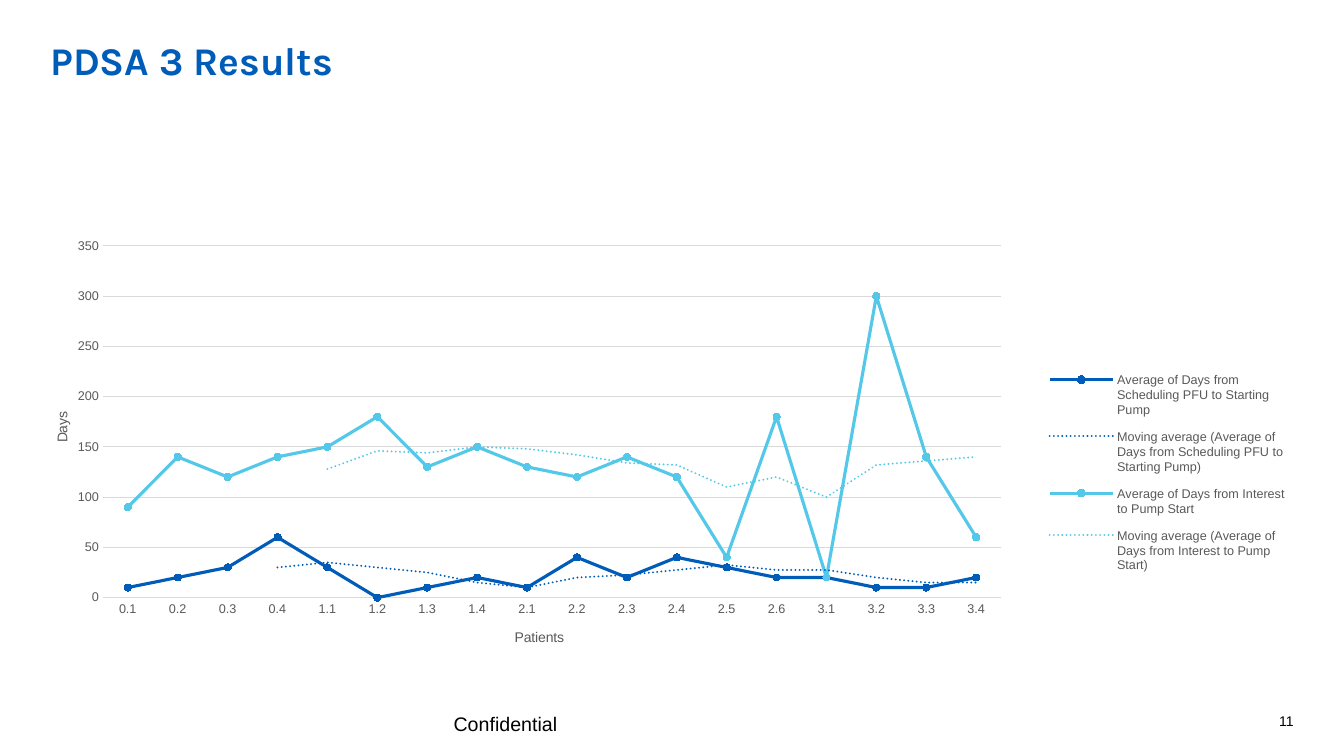
from lxml import etree
from pptx import Presentation
from pptx.chart.data import CategoryChartData
from pptx.dml.color import RGBColor
from pptx.enum.chart import XL_CHART_TYPE, XL_LEGEND_POSITION, XL_MARKER_STYLE, XL_TICK_MARK
from pptx.enum.text import MSO_ANCHOR, PP_ALIGN
from pptx.oxml import parse_xml
from pptx.oxml.ns import nsdecls, qn
from pptx.util import Inches, Pt

LINE_MARKERS = XL_CHART_TYPE.LINE_MARKERS
LEGEND_RIGHT = XL_LEGEND_POSITION.RIGHT
CIRCLE = XL_MARKER_STYLE.CIRCLE
NO_TICK = XL_TICK_MARK.NONE
TOP, BOTTOM = MSO_ANCHOR.TOP, MSO_ANCHOR.BOTTOM
LEFT, RIGHT = PP_ALIGN.LEFT, PP_ALIGN.RIGHT

THEME = {
    "blue": "005CB9", "sky": "54C8E8", "black": "000000",
    "gray": "595959", "grid": "D9D9D9",
    "head": "Karla", "body": "Arial",
    "title": 28, "footer": 14, "small": 10, "label": 9,
}
CHART_W, CHART_H = 12.32, 4.58


def set_font(font, size, color, name=THEME["body"], bold=False):
    font.size, font.name, font.bold = Pt(THEME[size]), name, bold
    font.color.rgb = RGBColor.from_string(THEME[color])


def place(el, index, x, y, w=None, h=None, inner=False):
    """Place a chart part, in inches from the chart's corner."""
    for old in el.findall(qn("c:layout")):
        el.remove(old)
    layout = etree.Element(qn("c:layout"))
    manual = etree.SubElement(layout, qn("c:manualLayout"))
    settings = [("layoutTarget", "inner")] if inner else []
    settings += [("xMode", "edge"), ("yMode", "edge"), ("x", x / CHART_W), ("y", y / CHART_H)]
    settings += [("w", w / CHART_W), ("h", h / CHART_H)] if w else []
    for tag, val in settings:
        etree.SubElement(manual, qn("c:" + tag)).set("val", str(val))
    el.insert(index, layout)


prs = Presentation()
prs.slide_width, prs.slide_height = Inches(13.33), Inches(7.5)
s = prs.slides.add_slide(prs.slide_layouts[6])

# Title, footer and page number
texts = [
    ("PDSA 3 Results", (0.5, 0.36, 8.12, 1.01), "title", "blue", "head", TOP, LEFT, (0, 0)),
    ("Confidential", (4.4, 7.01, 4.22, 0.23), "footer", "black", "body", TOP, LEFT, (0.1, 0.05)),
    ("11", (12.34, 7.08, 0.49, 0.16), "small", "black", "body", BOTTOM, RIGHT, (0, 0)),
]
for text, box, size, color, face, anchor, align, (pad_x, pad_y) in texts:
    tf = s.shapes.add_textbox(*map(Inches, box)).text_frame
    tf.word_wrap, tf.vertical_anchor = True, anchor
    tf.margin_left = tf.margin_right = Inches(pad_x)
    tf.margin_top = tf.margin_bottom = Inches(pad_y)
    p = tf.paragraphs[0]
    p.text, p.alignment = text, align
    set_font(p.runs[0].font, size, color, THEME[face], bold=size == "title")

# Chart data: name, colour, moving average period, days per patient
series = [
    ("Average of Days from Scheduling PFU to Starting Pump", "blue", 4,
     [10, 20, 30, 60, 30, 0, 10, 20, 10, 40, 20, 40, 30, 20, 20, 10, 10, 20]),
    ("Average of Days from Interest to Pump Start", "sky", 5,
     [90, 140, 120, 140, 150, 180, 130, 150, 130, 120, 140, 120, 40, 180, 20, 300, 140, 60]),
]
data = CategoryChartData()
data.categories = [f"{cycle}.{n}" for cycle, count in enumerate([4, 4, 6, 4])
                   for n in range(1, count + 1)]
for name, color, period, days in series:
    data.add_series(name, days)
box = map(Inches, (0.5, 2.06, CHART_W, CHART_H))
chart = s.shapes.add_chart(LINE_MARKERS, *box, data).chart
set_font(chart.font, "small", "black")
chart.has_title = False
plot = chart.plots[0]
plot.vary_by_categories = False
place(chart._chartSpace.chart.plotArea, 0, 0.52, 0.38, 8.91, 3.49, inner=True)

# Lines, markers and moving averages
for ser, (name, color, period, days) in zip(plot.series, series):
    rgb = RGBColor.from_string(THEME[color])
    ser.smooth = False
    ser.format.line.color.rgb, ser.format.line.width = rgb, Pt(2.25)
    ser.marker.style, ser.marker.size = CIRCLE, 5
    ser.marker.format.fill.solid()
    ser.marker.format.fill.fore_color.rgb = rgb
    ser.marker.format.line.color.rgb = rgb
    trend = parse_xml(
        f'<c:trendline {nsdecls("c", "a")}>'
        f'<c:name>Moving average ({name})</c:name>'
        f'<c:spPr><a:ln w="{Pt(1.5)}" cap="rnd"><a:solidFill><a:srgbClr val="{rgb}"/></a:solidFill>'
        '<a:prstDash val="sysDot"/></a:ln></c:spPr>'
        f'<c:trendlineType val="movingAvg"/><c:period val="{period}"/>'
        '<c:dispRSqr val="0"/><c:dispEq val="0"/></c:trendline>')
    ser._element.find(qn("c:cat")).addprevious(trend)

# Axes
grid = RGBColor.from_string(THEME["grid"])
cat_axis, val_axis = chart.category_axis, chart.value_axis
for axis, title, x, y in [(cat_axis, "Patients", 4.58, 4.15), (val_axis, "Days", 0, 2)]:
    axis.major_tick_mark = axis.minor_tick_mark = NO_TICK
    set_font(axis.tick_labels.font, "label", "gray")
    tf = axis.axis_title.text_frame
    tf.text = title
    set_font(tf.paragraphs[0].runs[0].font, "small", "gray")
    place(axis.axis_title._element, 1, x, y)
cat_axis.format.line.color.rgb, cat_axis.format.line.width = grid, Pt(0.75)
val_axis.format.line.fill.background()
val_axis.minimum_scale, val_axis.maximum_scale, val_axis.major_unit = 0, 350, 50
gridlines = val_axis.major_gridlines.format.line
gridlines.color.rgb, gridlines.width = grid, Pt(0.75)

# Legend
chart.has_legend = True
legend = chart.legend
legend.position, legend.include_in_layout = LEGEND_RIGHT, False
set_font(legend.font, "label", "gray")
place(legend._element, 1, 9.91, 1.52, 2.36, 2.23)

prs.save("out.pptx")
